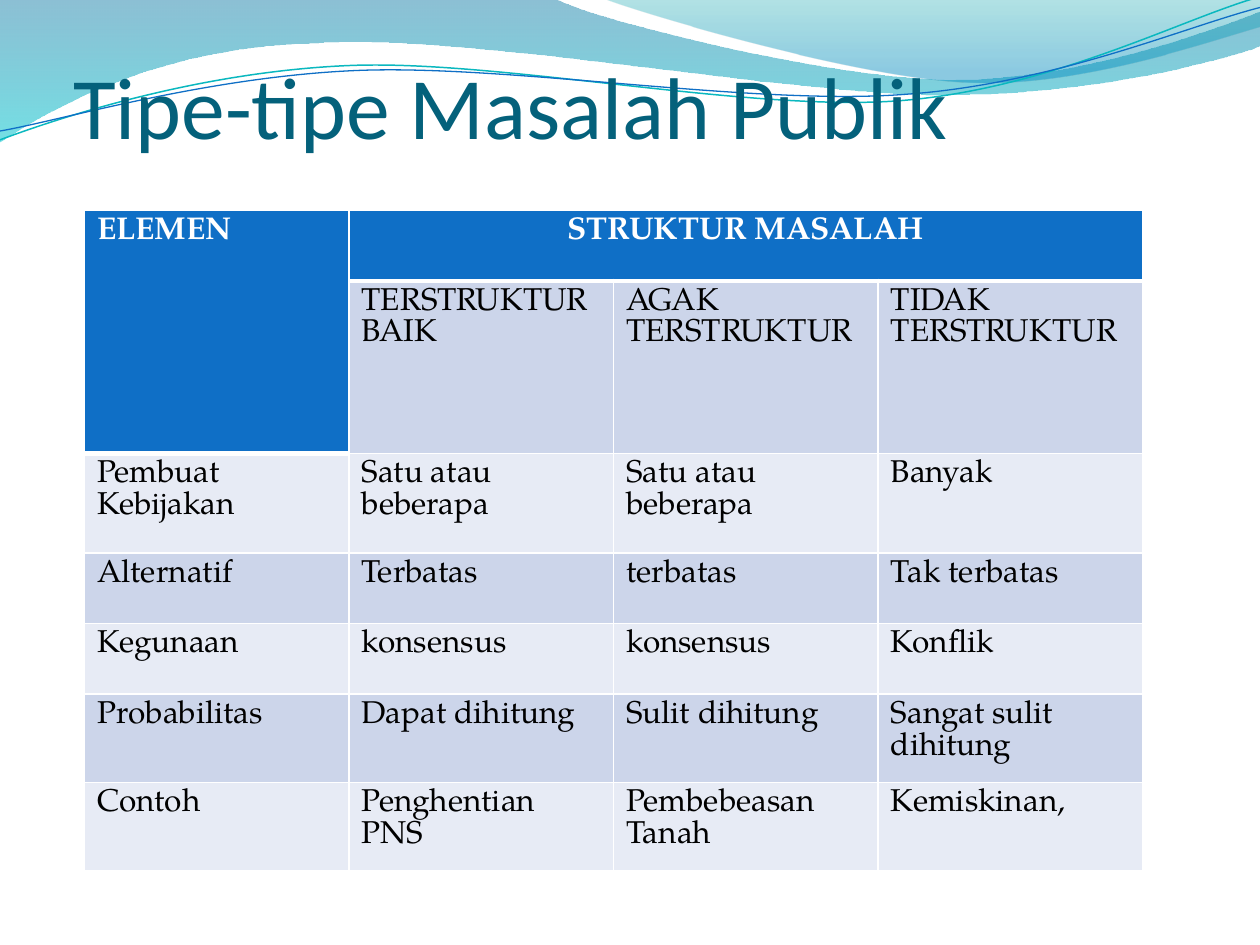
import math

import pptx
import pptx.chart.data
import pptx.dml.color
import pptx.enum.text
import pptx.oxml
import pptx.oxml.ns
import pptx.util
from lxml import etree
from pptx.util import Inches

COLORS = {
    "title": "04617B", "header": "0F6FC6", "band": "CCD5EA", "light": "E7EBF5",
    "white": "FFFFFF", "black": "000000", "teal": "0AB8BF",
    "wave_top": "0074A1", "wave_end": "00C6CF",
    "crest_top": "00A1A9", "crest_end": "008BBF",
}
WAVE = [(-0.01, -0.01), [(4.4, -0.01)],
        [(4.76, 0.17), (6.64, 0.63), (7.58, 0.63)],
        [(8.53, 0.63), (9.58, 0.26), (10, 0.09)], [(10.01, 0.36)],
        [(9.83, 0.44), (8.7, 0.76), (7.46, 0.75)],
        [(6.22, 0.75), (3.82, 0.28), (2.57, 0.34)],
        [(1.29, 0.36), (0.46, 0.83), (-0.01, 1.13)]]
CREST = [(4.79, -0.01),
         [(5.09, 0.11), (6.82, 0.62), (7.69, 0.65)],
         [(8.56, 0.69), (9.61, 0.32), (10, 0.21)], [(10, 0)]]
TEAL_LINE = [(0, 1.11),
             [(0.48, 0.93), (1.58, 0.57), (2.77, 0.52)],
             [(3.95, 0.47), (5.93, 0.89), (7.13, 0.8)],
             [(8.33, 0.71), (9.38, 0.15), (9.98, -0.02)]]
BLUE_LINE = [(0, 1.04),
             [(0.47, 0.96), (1.64, 0.61), (2.83, 0.56)],
             [(4.03, 0.51), (5.97, 0.84), (7.17, 0.75)],
             [(8.36, 0.67), (9.41, 0.21), (10, 0.06)]]
ROWS = [
    ["ELEMEN", "STRUKTUR MASALAH", "", ""],
    ["", "TERSTRUKTUR BAIK", "AGAK TERSTRUKTUR", "TIDAK TERSTRUKTUR"],
    ["Pembuat Kebijakan", "Satu atau beberapa", "Satu atau beberapa", "Banyak"],
    ["Alternatif", "Terbatas", "terbatas", "Tak terbatas"],
    ["Kegunaan", "konsensus", "konsensus", "Konflik"],
    ["Probabilitas", "Dapat dihitung", "Sulit dihitung", "Sangat sulit dihitung"],
    ["Contoh", "Penghentian PNS", "Pembebeasan Tanah", "Kemiskinan,"],
]
HEIGHTS = [0.56, 1.37, 0.79] + [0.56] * 4
TILT = -2.7


def is_header(row, col):
    return row == 0 or (row, col) == (1, 0)


def turn(point, center, degrees):
    a = math.radians(degrees)
    dx, dy = point[0] - center[0], point[1] - center[1]
    return (center[0] + dx * math.cos(a) - dy * math.sin(a),
            center[1] + dx * math.sin(a) + dy * math.cos(a))


class Deck:
    """Holds the style and the current slide."""

    def __init__(self, slide, title_font="Calibri", body_font="TeX Gyre Pagella"):
        self.s = slide
        self.title_font = title_font
        self.body_font = body_font

    def color(self, name):
        return pptx.dml.color.RGBColor.from_string(COLORS[name])

    def run(self, p, text, font, size, color, bold=False):
        r = p.add_run()
        r.text = text
        r.font.name = font
        r.font.size = pptx.util.Pt(size)
        r.font.bold = bold
        r.font.color.rgb = self.color(color)

    def outline(self, path, closed):
        start, *segments = path
        points = [(Inches(x), Inches(y)) for seg in segments for x, y in seg]
        fb = self.s.shapes.build_freeform(Inches(start[0]), Inches(start[1]))
        fb.add_line_segments(points, close=closed)
        sp = fb.convert_to_shape()
        sp.shadow.inherit = False
        qn = pptx.oxml.ns.qn
        lines = iter(list(sp._element.spPr.iter(qn("a:lnTo"))))
        for seg in segments:
            first, *rest = [next(lines) for _ in seg]
            if rest:
                first.tag = qn("a:cubicBezTo")
                for line in rest:
                    first.append(line[0])
                    line.getparent().remove(line)
        return sp

    def wave(self, path, stops):
        sp = self.outline(path, True)
        sp.line.fill.background()
        sp.fill.gradient()
        sp.fill.gradient_angle = 270
        for stop, (position, color, _) in zip(sp.fill.gradient_stops, stops):
            stop.position = position
            stop.color.rgb = self.color(color)
        qn = pptx.oxml.ns.qn
        for clr, (_, _, opacity) in zip(sp._element.spPr.iter(qn("a:srgbClr")), stops):
            etree.SubElement(clr, qn("a:alpha"), val=str(opacity * 1000))

    def curve(self, path, center, color, width):
        start, *segments = path
        flat = [turn(start, center, -TILT)]
        flat += [[turn(pt, center, -TILT) for pt in seg] for seg in segments]
        sp = self.outline(flat, False)
        sp.rotation = TILT
        sp.fill.background()
        sp.line.color.rgb = self.color(color)
        sp.line.width = pptx.util.Pt(width)

    def title(self, text, left, top, width, height):
        sp = self.s.shapes.add_textbox(Inches(left), Inches(top), Inches(width), Inches(height))
        tf = sp.text_frame
        tf.word_wrap = True
        tf.vertical_anchor = pptx.enum.text.MSO_ANCHOR.BOTTOM
        tf.margin_left = tf.margin_right = tf.margin_bottom = 0
        tf.margin_top = Inches(0.05)
        self.run(tf.paragraphs[0], text, self.title_font, 50, "title")

    def borders(self, cell, **widths):
        qn = pptx.oxml.ns.qn
        tc_pr = cell._tc.get_or_add_tcPr()
        for side in "LRTB":
            width = pptx.util.Pt(widths.get(side, 1))
            ln = etree.SubElement(tc_pr, qn("a:ln" + side), w=str(width))
            fill = etree.SubElement(ln, qn("a:solidFill"))
            etree.SubElement(fill, qn("a:srgbClr"), val=COLORS["white"])

    def table(self, rows, heights, left, top, col_width):
        cols = len(rows[0])
        table = self.s.shapes.add_table(
            len(rows), cols, Inches(left), Inches(top),
            Inches(col_width * cols), Inches(sum(heights))).table
        for column in table.columns:
            column.width = Inches(col_width)
        for i, (texts, height) in enumerate(zip(rows, heights)):
            table.rows[i].height = Inches(height)
            for j, text in enumerate(texts):
                cell = table.cell(i, j)
                header = is_header(i, j)
                self.borders(cell, B=3 if header else 1,
                             T=3 if i and is_header(i - 1, j) else 1)
                cell.fill.solid()
                band = "band" if i % 2 else "light"
                cell.fill.fore_color.rgb = self.color("header" if header else band)
                if text:
                    self.run(cell.text_frame.paragraphs[0], text, self.body_font, 18,
                             "white" if header else "black", header)
        table.cell(0, 0).merge(table.cell(1, 0))
        table.cell(0, 1).merge(table.cell(0, cols - 1))
        p = table.cell(0, 1).text_frame.paragraphs[0]
        p.alignment = pptx.enum.text.PP_ALIGN.CENTER


def main():
    prs = pptx.Presentation()
    prs.slide_width, prs.slide_height = Inches(10), Inches(7.5)
    deck = Deck(prs.slides.add_slide(prs.slide_layouts[6]))
    deck.wave(WAVE, [(0, "wave_top", 45), (1, "wave_end", 55)])
    deck.wave(CREST, [(0, "crest_top", 30), (0.8, "crest_end", 45)])
    deck.curve(TEAL_LINE, (4.99, 0.58), "teal", 0.85)
    deck.curve(BLUE_LINE, (5, 0.59), "header", 0.75)
    deck.title("Tipe-tipe Masalah Publik", 0.58, 0, 9, 1.25)
    deck.table(ROWS, HEIGHTS, 0.67, 1.67, 2.1)
    prs.save("out.pptx")


if __name__ == "__main__":
    main()
